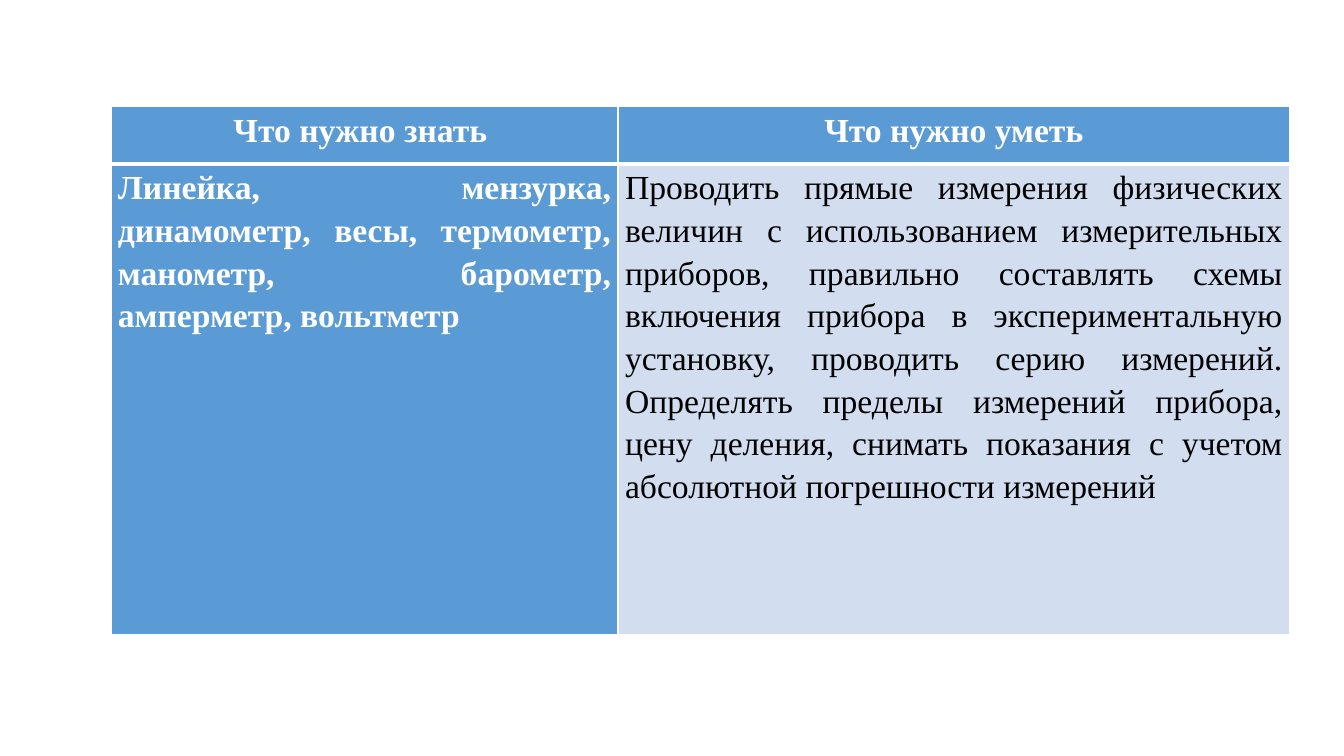
from dataclasses import dataclass

from lxml.etree import SubElement
from pptx import Presentation
from pptx.dml.color import RGBColor
from pptx.enum.text import PP_ALIGN
from pptx.oxml.ns import qn
from pptx.util import Inches, Pt


@dataclass(frozen=True)
class Theme:
    font: str = "Times New Roman"
    size: int = 24
    white: str = "FFFFFF"
    black: str = "000000"
    blue: str = "5B9BD5"
    pale: str = "D2DEEF"
    thin: int = 1
    thick: int = 3


theme = Theme()


def write_text(cell, text, align, color, bold):
    paragraph = cell.text_frame.paragraphs[0]
    paragraph.alignment = align
    paragraph.line_spacing = 1.15
    run = paragraph.add_run()
    run.text = text
    run.font.name = theme.font
    run.font.size = Pt(theme.size)
    run.font.bold = bold
    run.font.color.rgb = RGBColor.from_string(color)


def draw_borders(cell, widths):
    properties = cell._tc.get_or_add_tcPr()
    for side, width in zip("LRTB", widths):
        line = SubElement(properties, qn(f"a:ln{side}"), w=str(Pt(width)))
        fill = SubElement(line, qn("a:solidFill"))
        SubElement(fill, qn("a:srgbClr"), val=theme.white)


presentation = Presentation()
presentation.slide_width = Inches(13.33)
presentation.slide_height = Inches(7.5)
slide = presentation.slides.add_slide(presentation.slide_layouts[6])

column_widths = [5.03, 6.66]
row_heights = [0.57, 4.67]
rows = [
    ["Что нужно знать ", "Что нужно уметь"],
    [
        "Линейка, мензурка, динамометр, весы, термометр, манометр, "
        "барометр, амперметр, вольтметр",
        "Проводить прямые измерения физических величин с использованием "
        "измерительных приборов, правильно составлять схемы включения прибора "
        "в экспериментальную установку, проводить серию измерений. "
        "Определять пределы измерений прибора, цену деления, снимать показания "
        "с учетом абсолютной погрешности измерений",
    ],
]

table = slide.shapes.add_table(
    len(row_heights), len(column_widths), Inches(1.1), Inches(1.06),
    Inches(sum(column_widths)), Inches(sum(row_heights)),
).table
for column, width in zip(table.columns, column_widths):
    column.width = Inches(width)
for row, height in zip(table.rows, row_heights):
    row.height = Inches(height)

for row_index, texts in enumerate(rows):
    is_header = row_index == 0
    top, bottom = (theme.thin, theme.thick) if is_header else (theme.thick, theme.thin)
    for column_index, text in enumerate(texts):
        cell = table.cell(row_index, column_index)
        is_heading = is_header or column_index == 0
        cell.margin_left = cell.margin_right = Inches(0.07)
        cell.margin_top = cell.margin_bottom = 0
        draw_borders(cell, [theme.thin, theme.thin, top, bottom])
        cell.fill.solid()
        cell.fill.fore_color.rgb = RGBColor.from_string(
            theme.blue if is_heading else theme.pale
        )
        write_text(
            cell, text,
            align=PP_ALIGN.CENTER if is_header else PP_ALIGN.JUSTIFY,
            color=theme.white if is_heading else theme.black,
            bold=is_heading,
        )

presentation.save("out.pptx")
